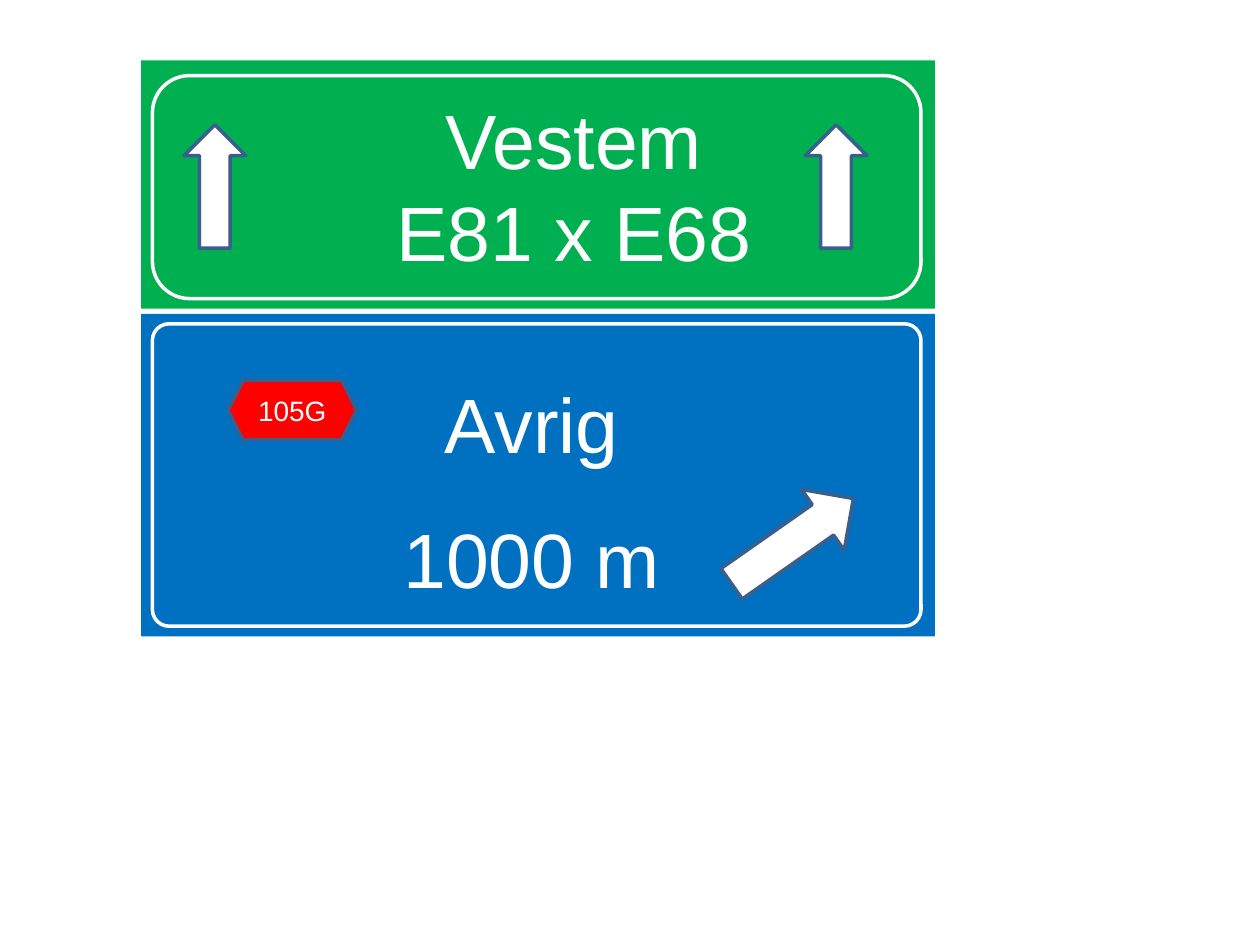
from pptx import Presentation
from pptx.dml.color import RGBColor
from pptx.enum.shapes import MSO_SHAPE
from pptx.enum.text import MSO_ANCHOR, MSO_AUTO_SIZE, PP_ALIGN
from pptx.util import Inches, Pt

ROUNDED, HEXAGON = MSO_SHAPE.ROUNDED_RECTANGLE, MSO_SHAPE.HEXAGON
UP_ARROW, RIGHT_ARROW = MSO_SHAPE.UP_ARROW, MSO_SHAPE.RIGHT_ARROW
MIDDLE, TOP = MSO_ANCHOR.MIDDLE, MSO_ANCHOR.TOP
CENTER, NO_FIT = PP_ALIGN.CENTER, MSO_AUTO_SIZE.NONE

WHITE = RGBColor(0xFF, 0xFF, 0xFF)
GREEN = RGBColor(0x00, 0xB0, 0x50)
BLUE = RGBColor(0x00, 0x70, 0xC0)
RED = RGBColor(0xFF, 0x00, 0x00)
EDGE = RGBColor(0x3A, 0x5F, 0x8C)

SIGN_LEFT, SIGN_WIDTH = 1.12, 6.3
BORDER_INSET, BORDER_WIDTH = 0.09, 6.1


def write_text(shape, lines, size=44, anchor=MIDDLE, insets=(0.1, 0.05, 0.1, 0.05), gap=0):
    """Fill a shape with centred white lines; gap is the space between paragraphs."""
    frame = shape.text_frame
    frame.word_wrap = True
    frame.auto_size = NO_FIT
    frame.vertical_anchor = anchor
    (frame.margin_left, frame.margin_top,
     frame.margin_right, frame.margin_bottom) = map(Inches, insets)
    frame.text = "\n".join(lines)
    for index, para in enumerate(frame.paragraphs):
        para.alignment = CENTER
        para.space_before = Pt(gap if index else 0)
        for span in para.runs:
            span.font.name = "Arial"
            span.font.size = Pt(size)
            span.font.color.rgb = WHITE


def place_panel(placeholder, box, color):
    """Turn a placeholder into the coloured plate of a sign."""
    (placeholder.left, placeholder.top,
     placeholder.width, placeholder.height) = map(Inches, box)
    placeholder.fill.solid()
    placeholder.fill.fore_color.rgb = color


def add_shape(page, kind, box, fill=None, line=EDGE):
    shape = page.shapes.add_shape(kind, *map(Inches, box))
    shape.shadow.inherit = False
    if fill is None:
        shape.fill.background()
    else:
        shape.fill.solid()
        shape.fill.fore_color.rgb = fill
    shape.line.color.rgb = line
    shape.line.width = Pt(2)
    return shape


def add_border(page, box, inset, height):
    left, top = box[:2]
    return add_shape(page, ROUNDED, (left + BORDER_INSET, top + inset, BORDER_WIDTH, height),
                     line=WHITE)


def add_ahead_sign(page, box):
    left, top = box[:2]
    place_panel(page.shapes.title, box, GREEN)
    write_text(page.shapes.title, ["Vestem\vE81 x E68"], insets=(0.67, 0.05, 0.1, 0.05))
    for offset in (0.34, 5.27):
        add_shape(page, UP_ARROW, (left + offset, top + 0.51, 0.49, 0.98), WHITE)
    add_border(page, box, 0.12, 1.77)


def add_exit_sign(page, box):
    left, top = box[:2]
    panel = page.placeholders[1]
    place_panel(panel, box, BLUE)
    write_text(panel, ["Avrig", "1000 m"], anchor=TOP, insets=(0, 0.5, 0.1, 0.24), gap=24)
    arrow = add_shape(page, RIGHT_ARROW, (left + 4.58, top + 1.51, 1.18, 0.59), WHITE)
    arrow.rotation = 325
    add_border(page, box, 0.08, 2.4).adjustments[0] = 0.055
    badge = add_shape(page, HEXAGON, (left + 0.69, top + 0.53, 1.02, 0.47), RED)
    write_text(badge, ["105G"], size=16)


def main():
    deck = Presentation()
    deck.slide_width, deck.slide_height = Inches(10), Inches(7.5)
    # The title layout gives a title for one sign and a subtitle for the other.
    page = deck.slides.add_slide(deck.slide_layouts[0])
    add_ahead_sign(page, (SIGN_LEFT, 0.48, SIGN_WIDTH, 1.97))
    add_exit_sign(page, (SIGN_LEFT, 2.49, SIGN_WIDTH, 2.56))
    deck.save("out.pptx")


if __name__ == "__main__":
    main()
